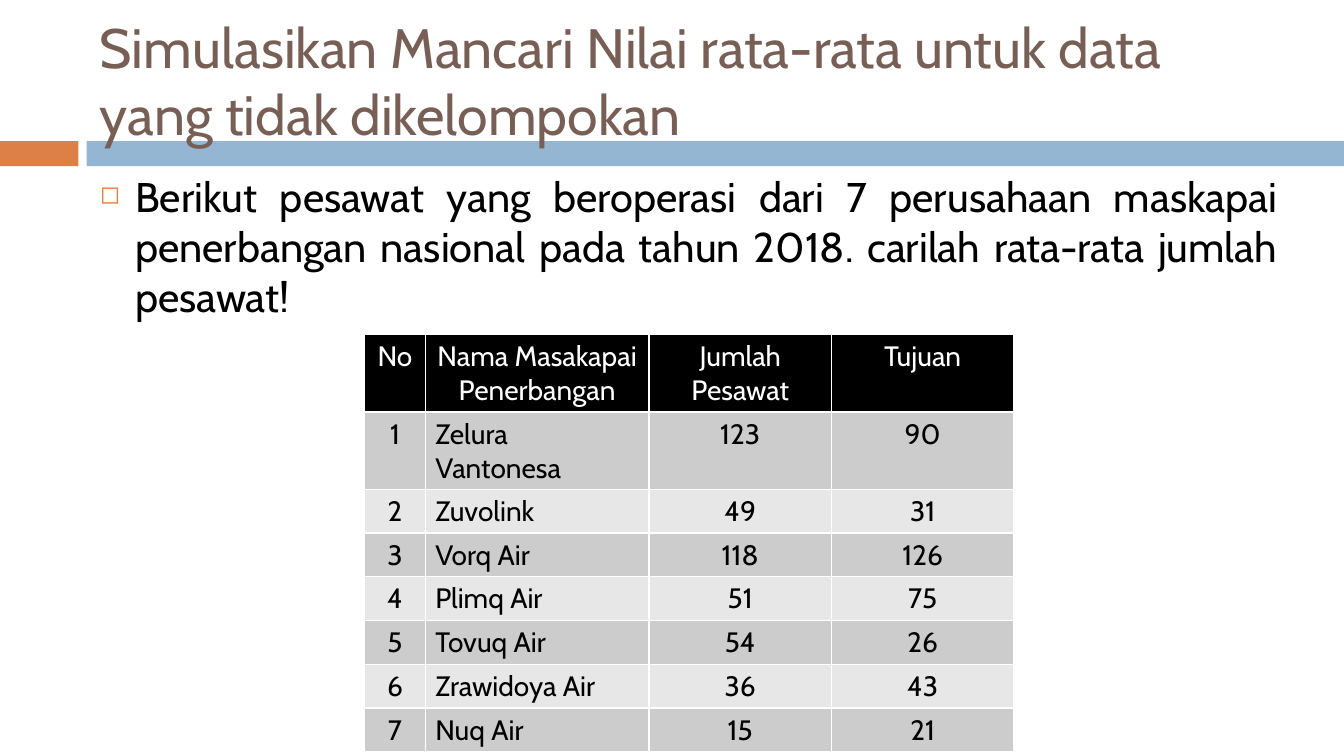
from dataclasses import dataclass

from lxml.etree import SubElement
from pptx import Presentation
from pptx.dml.color import RGBColor
from pptx.enum.shapes import MSO_SHAPE
from pptx.enum.text import MSO_ANCHOR, MSO_AUTO_SIZE, PP_ALIGN
from pptx.oxml.ns import qn
from pptx.slide import Slide
from pptx.table import _Cell
from pptx.text.text import TextFrame, _Paragraph
from pptx.util import Emu, Inches, Pt

WIDE, HIGH = Inches(13.33), Inches(7.5)
FONT = "Cabin"
BROWN = RGBColor(0x77, 0x5F, 0x55)
ORANGE = RGBColor(0xDD, 0x80, 0x47)
BLUE = RGBColor(0x94, 0xB6, 0xD2)
BLACK = RGBColor(0x00, 0x00, 0x00)
WHITE = RGBColor(0xFF, 0xFF, 0xFF)
DARK = RGBColor(0xCC, 0xCC, 0xCC)
LIGHT = RGBColor(0xE7, 0xE7, 0xE7)


@dataclass(frozen=True)
class Box:
    """A place in percent of the slide's width and height."""
    left: float
    top: float
    width: float
    height: float

    def place(self) -> tuple[Emu, Emu, Emu, Emu]:
        return across(self.left), down(self.top), across(self.width), down(self.height)


@dataclass(frozen=True)
class Bar:
    box: Box
    color: RGBColor


@dataclass(frozen=True)
class Column:
    width: float
    align: PP_ALIGN


BARS = [
    Bar(Box(0, 18.67, 5.83, 3.33), ORANGE),
    Bar(Box(6.45, 18.67, 93.55, 3.33), BLUE),
]
TITLE_BOX = Box(6.68, 3.33, 89.2, 14.4)
BODY_BOX = Box(6.7, 22, 89.2, 19.73)
GRID_LEFT, GRID_TOP, GRID_HIGH, ROW = 27.14, 44.27, 55.07, 5.47
COLUMNS = [
    Column(4.5, PP_ALIGN.CENTER),
    Column(16.65, PP_ALIGN.LEFT),
    Column(13.58, PP_ALIGN.CENTER),
    Column(13.58, PP_ALIGN.CENTER),
]
TITLE = "Simulasikan Mancari Nilai rata-rata untuk data yang tidak dikelompokan"
BODY = ("Berikut pesawat yang beroperasi dari 7 perusahaan maskapai penerbangan "
        "nasional pada tahun 2018. carilah rata-rata jumlah pesawat!")
HEAD = ("No", "Nama Masakapai\nPenerbangan", "Jumlah Pesawat", "Tujuan")
FLEETS = [
    ("Zelura Vantonesa", 123, 90),
    ("Zuvolink", 49, 31),
    ("Vorq Air", 118, 126),
    ("Plimq Air", 51, 75),
    ("Tovuq Air", 54, 26),
    ("Zrawidoya Air", 36, 43),
    ("Nuq Air", 15, 21),
]


def across(share: float) -> Emu:
    return Emu(round(WIDE * share / 100))


def down(share: float) -> Emu:
    return Emu(round(HIGH * share / 100))


def write(frame: TextFrame, text: str, *, size: float, color: RGBColor,
          align: PP_ALIGN = PP_ALIGN.LEFT, before: float = 0) -> None:
    """Fill a frame with one paragraph for each line of the text."""
    frame.word_wrap = True
    frame.text = text
    for para in frame.paragraphs:
        para.alignment = align
        para.space_before = Pt(before)
        for run in para.runs:
            run.font.name = FONT
            run.font.size = Pt(size)
            run.font.color.rgb = color


def add_bullet(para: _Paragraph, mark: str, color: RGBColor, percent: int) -> None:
    props = para._p.get_or_add_pPr()
    props.set("marL", str(Inches(0.35)))
    props.set("indent", str(Inches(-0.35)))
    tint = SubElement(props, qn("a:buClr"))
    SubElement(tint, qn("a:srgbClr"), val=str(color))
    SubElement(props, qn("a:buSzPct"), val=str(percent * 1000))
    SubElement(props, qn("a:buChar"), char=mark)


def add_edges(cell: _Cell, color: RGBColor, width: float) -> None:
    props = cell._tc.get_or_add_tcPr()
    for side in "LRTB":
        line = SubElement(props, qn(f"a:ln{side}"), w=str(Pt(width)))
        fill = SubElement(line, qn("a:solidFill"))
        SubElement(fill, qn("a:srgbClr"), val=str(color))


def add_bar(slide: Slide, bar: Bar) -> None:
    shape = slide.shapes.add_shape(MSO_SHAPE.RECTANGLE, *bar.box.place())
    shape.shadow.inherit = False
    shape.fill.solid()
    shape.fill.fore_color.rgb = bar.color
    shape.line.fill.background()


def add_title(slide: Slide) -> None:
    """Format the title and bring it in front of the bars."""
    title = slide.shapes.title
    title.left, title.top, title.width, title.height = TITLE_BOX.place()
    frame = title.text_frame
    write(frame, TITLE, size=39.6, color=BROWN)
    frame.auto_size = MSO_AUTO_SIZE.NONE
    frame.vertical_anchor = MSO_ANCHOR.MIDDLE
    slide.shapes._spTree.append(title._element)


def add_body(slide: Slide) -> None:
    frame = slide.shapes.add_textbox(*BODY_BOX.place()).text_frame
    write(frame, BODY, size=29.6, color=BLACK, align=PP_ALIGN.JUSTIFY, before=7)
    add_bullet(frame.paragraphs[0], "◻", ORANGE, 60)


def add_grid(slide: Slide) -> None:
    """Draw the fleet table, whose frame is taller than its least row heights."""
    rows = [HEAD] + [(no, *fleet) for no, fleet in enumerate(FLEETS, 1)]
    box = Box(GRID_LEFT, GRID_TOP, sum(c.width for c in COLUMNS), ROW * len(rows))
    grid = slide.shapes.add_table(len(rows), len(COLUMNS), *box.place())
    table = grid.table
    table.horz_banding = False
    for col, column in zip(table.columns, COLUMNS):
        col.width = across(column.width)
    grid.height = down(GRID_HIGH)
    for r, row in enumerate(rows):
        head = r == 0
        back = BLACK if head else DARK if r % 2 else LIGHT
        for c, value in enumerate(row):
            cell = table.cell(r, c)
            write(cell.text_frame, str(value), size=20,
                  color=WHITE if head else BLACK,
                  align=PP_ALIGN.CENTER if head else COLUMNS[c].align)
            add_edges(cell, WHITE, 1)
            cell.fill.solid()
            cell.fill.fore_color.rgb = back


def main() -> None:
    deck = Presentation()
    deck.slide_width, deck.slide_height = WIDE, HIGH
    slide = deck.slides.add_slide(deck.slide_layouts[5])
    for bar in BARS:
        add_bar(slide, bar)
    add_title(slide)
    add_body(slide)
    add_grid(slide)
    deck.save("out.pptx")


if __name__ == "__main__":
    main()
